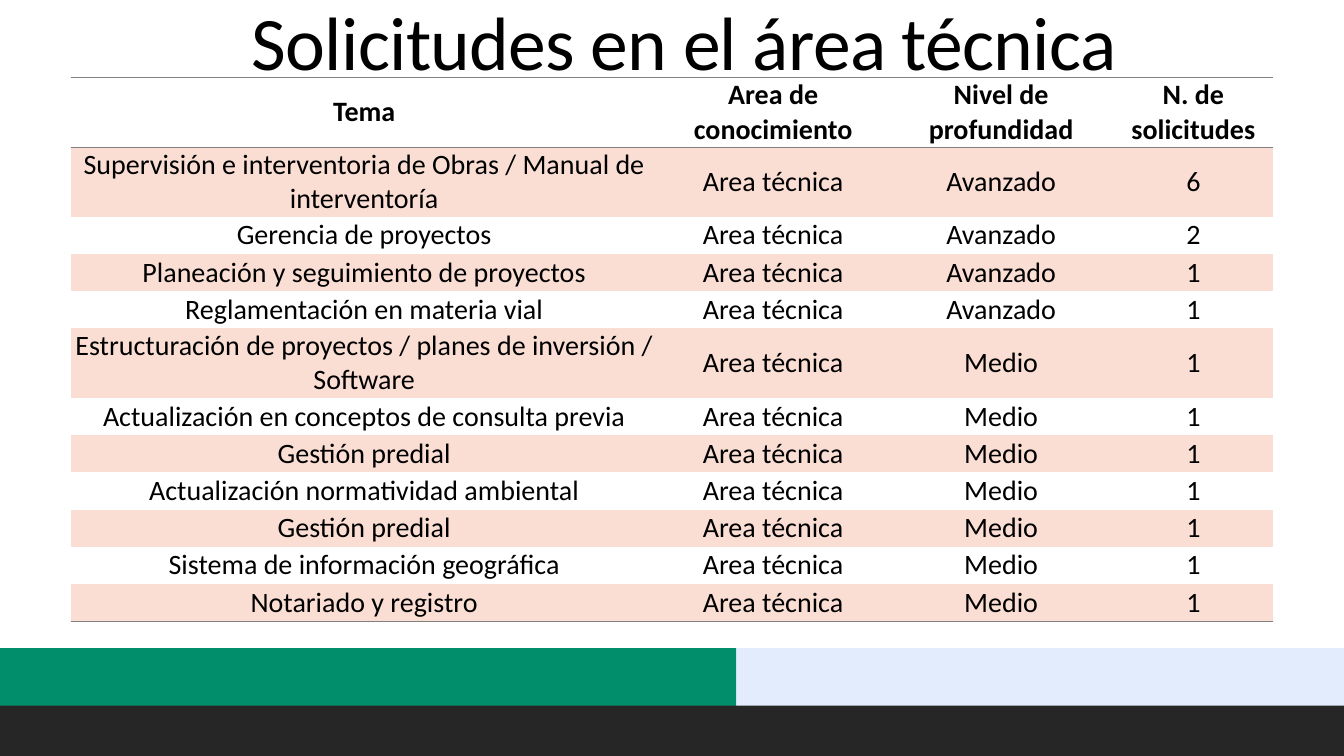
from lxml import etree
from pptx import Presentation
from pptx.dml.color import RGBColor
from pptx.enum.shapes import MSO_SHAPE
from pptx.enum.text import MSO_ANCHOR, MSO_AUTO_SIZE, PP_ALIGN
from pptx.oxml.ns import qn
from pptx.util import Pt

RECTANGLE = MSO_SHAPE.RECTANGLE
MIDDLE = MSO_ANCHOR.MIDDLE
CENTER = PP_ALIGN.CENTER
GROW = MSO_AUTO_SIZE.SHAPE_TO_FIT_TEXT

GREEN = RGBColor(0x01, 0x8E, 0x6B)
PALE_BLUE = RGBColor(0xE2, 0xEC, 0xFD)
CHARCOAL = RGBColor(0x26, 0x26, 0x26)
BLACK = RGBColor(0x00, 0x00, 0x00)
RULE_GRAY = RGBColor(0x80, 0x80, 0x80)
BAND_PINK = RGBColor(0xFA, 0xDE, 0xD4)

PLAIN_TABLE_STYLE = "{2D5ABB26-0587-4C30-8999-92F81FD0307C}"
PAGE_WIDTH, PAGE_HEIGHT = 960, 540
COLUMN_WIDTHS = (419.25, 165, 160.75, 114)
TALL_ROW, SHORT_ROW = 49.7, 26.6
TALL_ROWS = (0, 1, 5)

HEADINGS = ("Tema", "Area de conocimiento", "Nivel de profundidad", "N. de solicitudes")
AREA = "Area técnica"
REQUESTS = (
    ("Supervisión e interventoria de Obras / Manual de interventoría", "Avanzado", 6),
    ("Gerencia de proyectos", "Avanzado", 2),
    ("Planeación y seguimiento de proyectos", "Avanzado", 1),
    ("Reglamentación en materia vial", "Avanzado", 1),
    ("Estructuración de proyectos / planes de inversión / Software", "Medio", 1),
    ("Actualización en conceptos de consulta previa", "Medio", 1),
    ("Gestión predial", "Medio", 1),
    ("Actualización normatividad ambiental", "Medio", 1),
    ("Gestión predial", "Medio", 1),
    ("Sistema de información geográfica", "Medio", 1),
    ("Notariado y registro", "Medio", 1),
)


def set_values(target, values):
    """Set each named attribute of the target."""
    for name, value in values.items():
        setattr(target, name, value)


def write_text(frame, text, size, bold=False):
    """Write one black line of text and return its span."""
    span = frame.paragraphs[0].add_run()
    span.text = text
    set_values(span.font, {"name": "Calibri", "size": Pt(size), "bold": bold})
    span.font.color.rgb = BLACK
    return span


def add_footer(page, left, top, width, height):
    """Draw the green and pale blue bands over the dark strip."""
    split, strip = 526, 36
    bands = (
        (left, top, split, height, GREEN),
        (left + split, top, width - split, height, PALE_BLUE),
        (left, top + height - strip, width, strip, CHARCOAL),
    )
    for *place, color in bands:
        band = page.shapes.add_shape(RECTANGLE, *map(Pt, place))
        band.shadow.inherit = False
        band.fill.solid()
        band.fill.fore_color.rgb = color
        band.line.fill.background()


def add_title(page, left, top, width, height):
    """Place the slide title."""
    box = page.shapes.add_textbox(Pt(left), Pt(top), Pt(width), Pt(height))
    set_values(box.text_frame, {"word_wrap": True, "auto_size": GROW})
    span = write_text(box.text_frame, "Solicitudes en el área técnica", 54)
    span.font._element.set("spc", "-50")


def add_rule(cell, tag):
    """Draw a one-point rule on one side of a cell."""
    properties = cell._tc.get_or_add_tcPr()
    line = etree.SubElement(properties, qn(tag), w=str(Pt(1)))
    fill = etree.SubElement(line, qn("a:solidFill"))
    etree.SubElement(fill, qn("a:srgbClr"), val=str(RULE_GRAY))


def add_request_table(page, left, top, width, height):
    """Build the banded table of training requests."""
    rows = [HEADINGS] + [(topic, AREA, level, str(count)) for topic, level, count in REQUESTS]
    frame = page.shapes.add_table(
        len(rows), len(HEADINGS), Pt(left), Pt(top), Pt(width), Pt(height))
    table = frame.table
    table._tbl.tblPr.find(qn("a:tableStyleId")).text = PLAIN_TABLE_STYLE
    for column, column_width in zip(table.columns, COLUMN_WIDTHS):
        column.width = Pt(column_width)
    cell_format = {"margin_left": 0, "margin_right": 0, "margin_top": 0,
                   "margin_bottom": 0, "vertical_anchor": MIDDLE}
    for row_index, texts in enumerate(rows):
        table.rows[row_index].height = Pt(TALL_ROW if row_index in TALL_ROWS else SHORT_ROW)
        for column_index, text in enumerate(texts):
            cell = table.cell(row_index, column_index)
            set_values(cell, cell_format)
            write_text(cell.text_frame, text, 20, bold=row_index == 0)
            cell.text_frame.paragraphs[0].alignment = CENTER
            if row_index == 0:
                add_rule(cell, "a:lnT")
            if row_index in (0, len(rows) - 1):
                add_rule(cell, "a:lnB")
            if row_index % 2:
                cell.fill.solid()
                cell.fill.fore_color.rgb = BAND_PINK
            else:
                cell.fill.background()


def main():
    """Build and save the one-slide deck."""
    deck = Presentation()
    set_values(deck, {"slide_width": Pt(PAGE_WIDTH), "slide_height": Pt(PAGE_HEIGHT)})
    page = deck.slides.add_slide(deck.slide_layouts[6])
    add_footer(page, 0, 463, PAGE_WIDTH, 77)
    table_height = sum(
        TALL_ROW if index in TALL_ROWS else SHORT_ROW for index in range(len(REQUESTS) + 1))
    add_request_table(page, 50.5, 55.4, sum(COLUMN_WIDTHS), table_height)
    add_title(page, 172.75, -7.25, 663, 72.75)
    deck.save("out.pptx")


if __name__ == "__main__":
    main()
